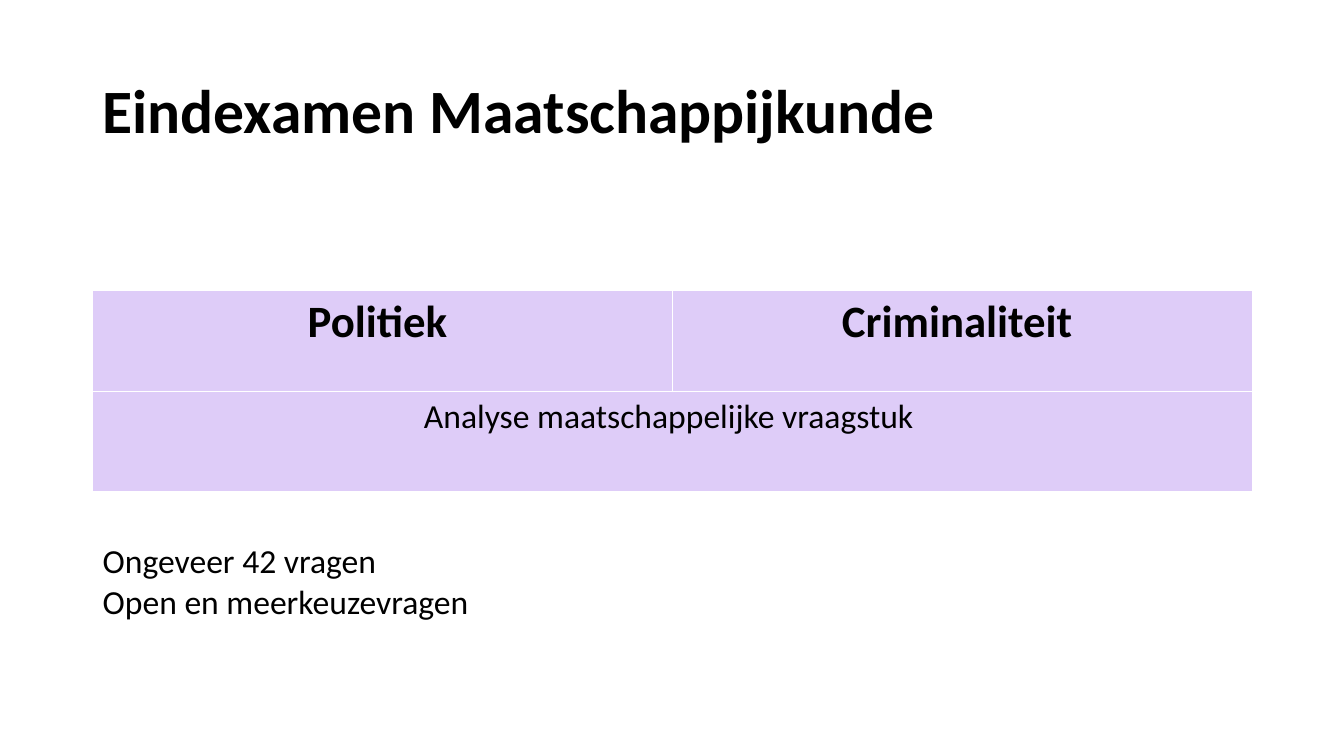
from pptx import Presentation
from pptx.dml.color import RGBColor
from pptx.enum.text import MSO_ANCHOR, PP_ALIGN
from pptx.util import Inches, Pt

FONT = "Calibri"
BLACK = "000000"
LILAC = "DECCF8"
LEFT, WIDTH = 0.92, 11.5


def color(hex_string):
    return RGBColor.from_string(hex_string)


def format_text(text_frame, size, bold=False, align=PP_ALIGN.LEFT):
    for paragraph in text_frame.paragraphs:
        paragraph.alignment = align
        for run in paragraph.runs:
            run.font.name = FONT
            run.font.size = Pt(size)
            run.font.bold = bold
            run.font.color.rgb = color(BLACK)


def add_text(slide, box, text, size, bold=False, anchor=MSO_ANCHOR.TOP):
    shape = slide.shapes.add_textbox(*map(Inches, box))
    text_frame = shape.text_frame
    text_frame.word_wrap = True
    text_frame.vertical_anchor = anchor
    text_frame.text = text
    format_text(text_frame, size, bold)
    return text_frame


def add_title(slide, box):
    text_frame = add_text(slide, box, "Eindexamen Maatschappijkunde", 44, True, MSO_ANCHOR.MIDDLE)
    text_frame.paragraphs[0].line_spacing = 0.9


def add_subject_table(slide, box):
    # The default table style supplies the white cell borders
    table = slide.shapes.add_table(2, 2, *map(Inches, box)).table
    table.cell(1, 0).merge(table.cell(1, 1))
    for cell in table.iter_cells():
        cell.fill.solid()
        cell.fill.fore_color.rgb = color(LILAC)

    # Two subjects above one shared part
    entries = [
        (0, 0, "Politiek ", 32, True),
        (0, 1, "Criminaliteit ", 32, True),
        (1, 0, "Analyse maatschappelijke vraagstuk ", 24, False),
    ]
    for row, column, text, size, bold in entries:
        text_frame = table.cell(row, column).text_frame
        text_frame.text = text
        format_text(text_frame, size, bold, PP_ALIGN.CENTER)


def add_exam_notes(slide, box):
    add_text(slide, box, "Ongeveer 42 vragen\nOpen en meerkeuzevragen", 24)


def main():
    presentation = Presentation()
    presentation.slide_width = Inches(13.33)
    presentation.slide_height = Inches(7.5)
    slide = presentation.slides.add_slide(presentation.slide_layouts[6])

    add_title(slide, (LEFT, 0.4, WIDTH, 1.45))
    add_subject_table(slide, (LEFT, 2.88, WIDTH, 2))
    add_exam_notes(slide, (LEFT, 5.31, 4.92, 1.21))

    presentation.save("out.pptx")


if __name__ == "__main__":
    main()
